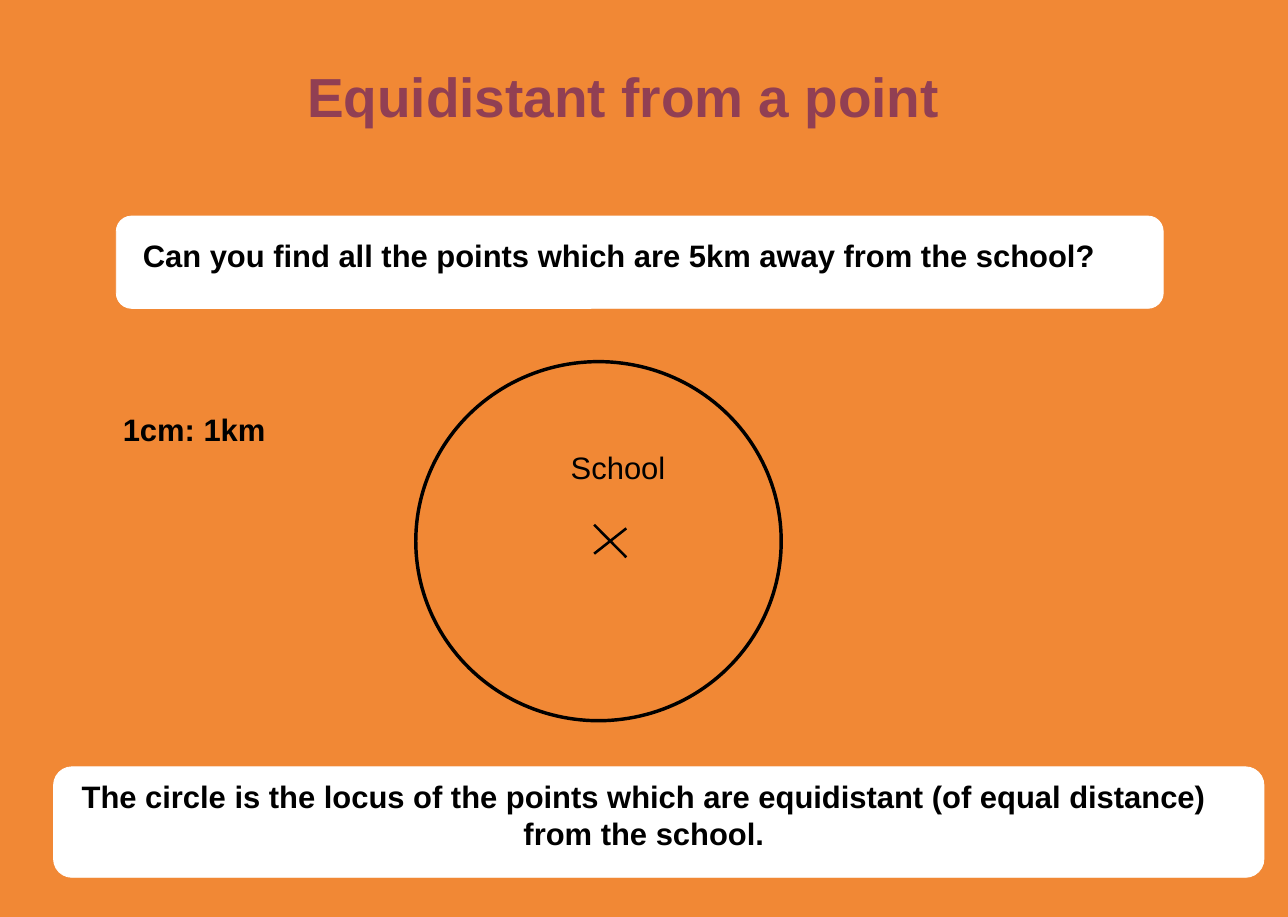
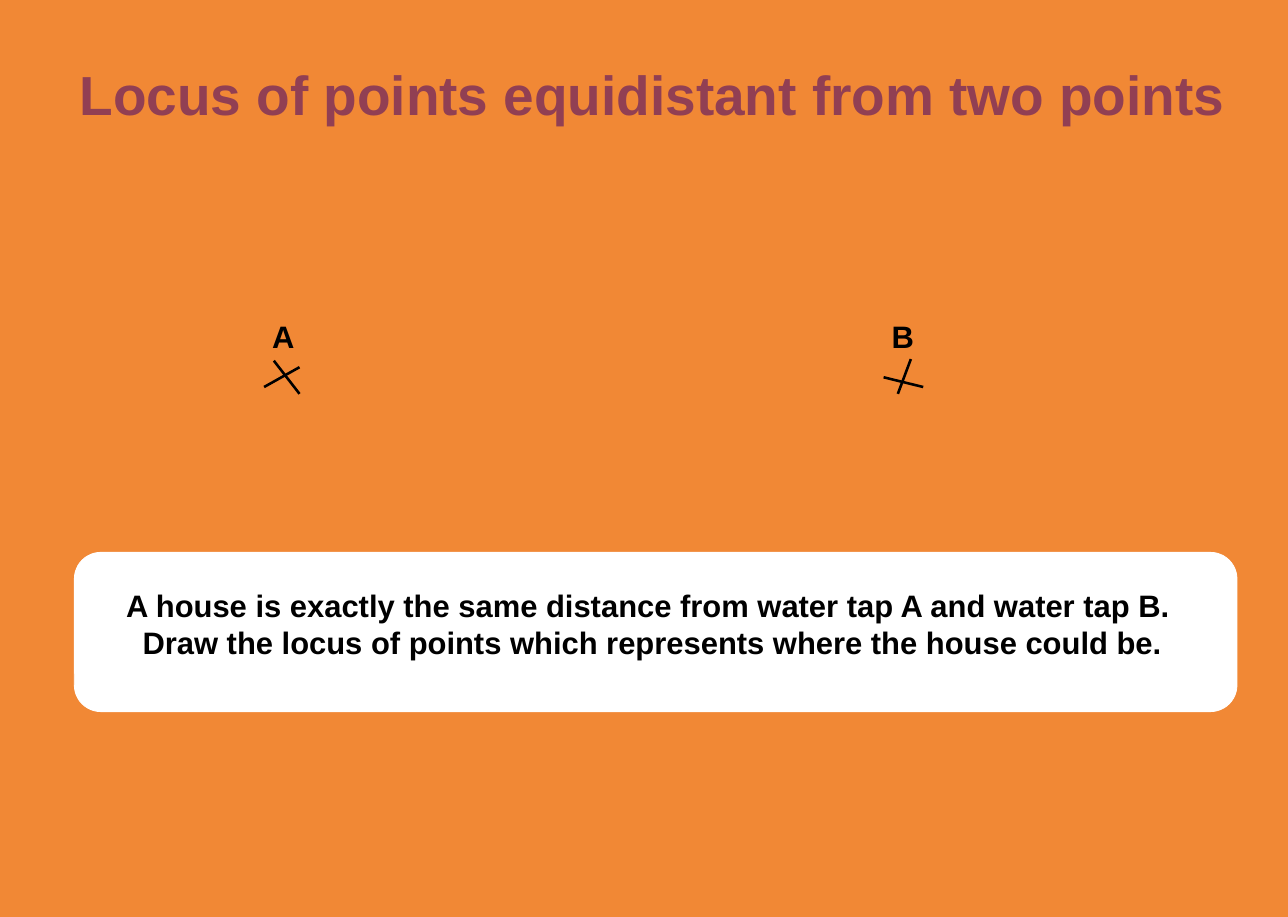
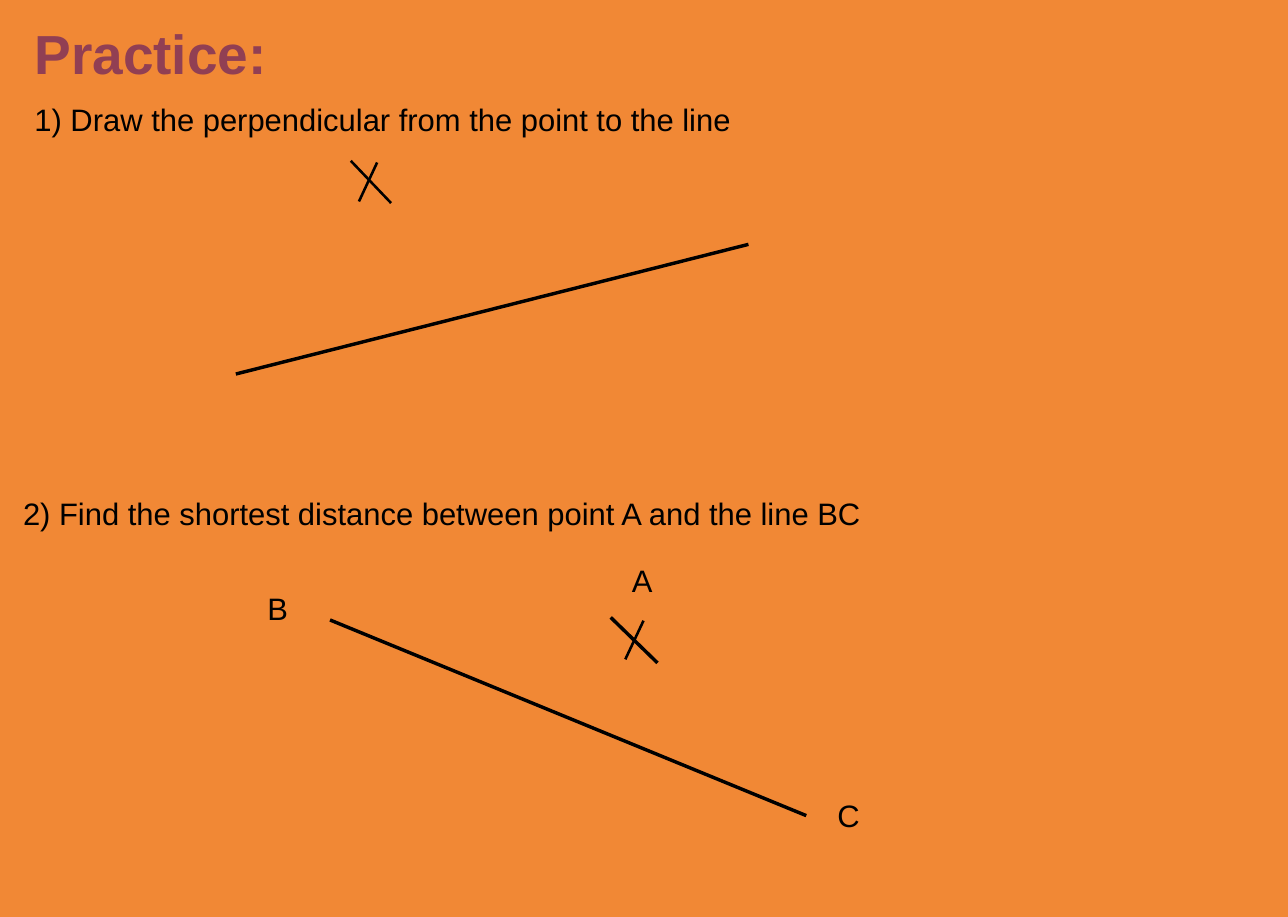
from lxml.etree import SubElement
from pptx import Presentation
from pptx.dml.color import RGBColor
from pptx.enum.shapes import MSO_CONNECTOR, MSO_SHAPE
from pptx.enum.text import MSO_ANCHOR, MSO_AUTO_SIZE, PP_ALIGN
from pptx.oxml.ns import qn
from pptx.util import Cm, Pt


def colour(value):
    """Turn a hex string into a colour."""
    return RGBColor.from_string(value)


class LociDeck:
    """Hold the shared style and the slide being built."""

    BACKGROUND = "F18835"
    TITLE = "913F53"
    INK = "000000"
    CARD = "FFFFFF"
    FONT = "Arial"
    TITLE_SIZE = 48
    BODY_SIZE = 27
    THIN = 2.25
    THICK = 3
    LINE_HEIGHT = 1.42
    LETTER_WIDTH = 1.68

    def __init__(self):
        """Open a presentation with the common page size and background."""
        self.presentation = Presentation()
        self.presentation.slide_width = Cm(39.65)
        self.presentation.slide_height = Cm(28.22)
        fill = self.presentation.slide_master.background.fill
        fill.solid()
        fill.fore_color.rgb = colour(self.BACKGROUND)
        self.slide = None

    def add_slide(self, title, left, top, width, align=PP_ALIGN.CENTER):
        """Start a title-only slide and place its title."""
        layout = self.presentation.slide_layouts.get_by_name("Title Only")
        self.slide = self.presentation.slides.add_slide(layout)
        shape = self.slide.shapes.title
        shape.left, shape.top = Cm(left), Cm(top)
        shape.width, shape.height = Cm(width), Cm(self.LINE_HEIGHT)
        self.set_text(shape, title, self.TITLE_SIZE, self.TITLE, True, align)

    def set_text(self, shape, text, size, ink, bold, align):
        """Fill a shape with text in the common style."""
        frame = shape.text_frame
        frame.text = text
        frame.word_wrap = True
        frame.auto_size = MSO_AUTO_SIZE.SHAPE_TO_FIT_TEXT
        frame.vertical_anchor = MSO_ANCHOR.TOP
        frame.margin_left = frame.margin_right = Cm(0.25)
        frame.margin_top = frame.margin_bottom = Cm(0.13)
        for paragraph in frame.paragraphs:
            paragraph.alignment = align
            for run in paragraph.runs:
                run.font.name = self.FONT
                run.font.size = Pt(size)
                run.font.bold = bold
                run.font.color.rgb = colour(ink)

    def add_text(self, text, left, top, width, height=LINE_HEIGHT,
                 bold=False, align=PP_ALIGN.LEFT):
        """Add a body text box."""
        box = self.slide.shapes.add_textbox(
            Cm(left), Cm(top), Cm(width), Cm(height))
        self.set_text(box, text, self.BODY_SIZE, self.INK, bold, align)

    def add_letter(self, letter, left, top, bold=False):
        """Label a point with one letter."""
        self.add_text(letter, left, top, self.LETTER_WIDTH, bold=bold)

    def add_outline(self, kind, bounds, line, weight):
        """Add an unfilled preset shape with an outline."""
        shape = self.slide.shapes.add_shape(kind, *map(Cm, bounds))
        shape.shadow.inherit = False
        shape.fill.background()
        shape.line.color.rgb = colour(line)
        shape.line.width = Pt(weight)
        return shape

    def add_circle(self, *bounds):
        """Add a thick circle outline."""
        self.add_outline(MSO_SHAPE.OVAL, bounds, self.INK, self.THICK)

    def add_card(self, *bounds):
        """Add a white rounded card."""
        card = self.add_outline(
            MSO_SHAPE.ROUNDED_RECTANGLE, bounds, self.CARD, 0.75)
        card.fill.solid()
        card.fill.fore_color.rgb = colour(self.CARD)

    def add_line(self, ends, weight=THICK):
        """Draw a straight line between two ends."""
        line = self.slide.shapes.add_connector(
            MSO_CONNECTOR.STRAIGHT, *map(Cm, ends))
        line.line.color.rgb = colour(self.INK)
        line.line.width = Pt(weight)
        SubElement(line._element.spPr, qn("a:effectLst"))

    def add_cross(self, first, second, first_weight=THIN):
        """Mark a point with two crossing strokes."""
        self.add_line(first, first_weight)
        self.add_line(second, self.THIN)


def build_one_point(deck):
    """Build the slide on points equidistant from one point."""
    deck.add_slide("Equidistant from a point", 8.69, 1.78, 21)
    deck.add_card(1.65, 23.6, 37.26, 3.4)
    deck.add_card(3.58, 6.65, 32.23, 2.84)
    deck.add_text(
        "Can you find all the points which are 5km away from the school? ",
        1.19, 7.14, 36, bold=True, align=PP_ALIGN.CENTER)
    deck.add_text("1cm: 1km", 3.53, 12.5, 8.76, bold=True)
    deck.add_text(
        "The circle is the locus of the points which are equidistant "
        "(of equal distance) from the school.",
        1.19, 23.8, 37.26, 2.57, True, PP_ALIGN.CENTER)
    deck.add_text("School", 17.32, 13.67, 5.94, 2.74)
    deck.add_circle(12.8, 11.13, 11.25, 11.05)
    deck.add_cross((18.29, 17.04, 19.28, 16.26), (18.29, 16.15, 19.28, 17.15))


def build_two_points(deck):
    """Build the slide on points equidistant from two points."""
    deck.add_slide(
        "Locus of points equidistant from two points", 0.84, 1.73, 38.5)
    deck.add_card(2.29, 17, 35.79, 4.9)
    deck.add_text(
        "A house is exactly the same distance from water tap A "
        "and water tap B. \n"
        "Draw the locus of points which represents where the house could be.",
        2.08, 17.93, 36, 2.57, True, PP_ALIGN.CENTER)
    for letter, left in (("A", 8.13), ("B", 27.2)):
        deck.add_letter(letter, left, 9.65, True)
    deck.add_cross((8.13, 11.91, 9.22, 11.3), (8.43, 11.1, 9.22, 12.12))
    deck.add_cross((27.2, 11.61, 28.42, 11.91), (27.64, 12.12, 28.04, 11.05))


def build_practice(deck):
    """Build the practice slide."""
    deck.add_slide("Practice:", 0.81, 0.46, 7.92, PP_ALIGN.LEFT)
    deck.add_line((7.26, 11.51, 23.04, 7.52))
    deck.add_text("1) Draw the perpendicular from the point to the line",
                  0.81, 2.95, 38.05)
    deck.add_text(
        "2) Find the shortest distance between point A and the line BC",
        0.46, 15.09, 38.13)
    deck.add_line((10.16, 19.08, 24.82, 25.1))
    for letter, left, top in (
            ("B", 7.98, 18), ("C", 25.53, 24.38), ("A", 19.2, 17.15)):
        deck.add_letter(letter, left, top)
    deck.add_cross((10.8, 4.95, 12.04, 6.25), (11.05, 6.2, 11.61, 5))
    deck.add_cross((18.8, 19, 20.24, 20.4), (19.25, 20.29, 19.81, 19.1),
                   deck.THICK)


def main():
    """Build and save the three slides."""
    deck = LociDeck()
    build_one_point(deck)
    build_two_points(deck)
    build_practice(deck)
    deck.presentation.save("out.pptx")


if __name__ == "__main__":
    main()
